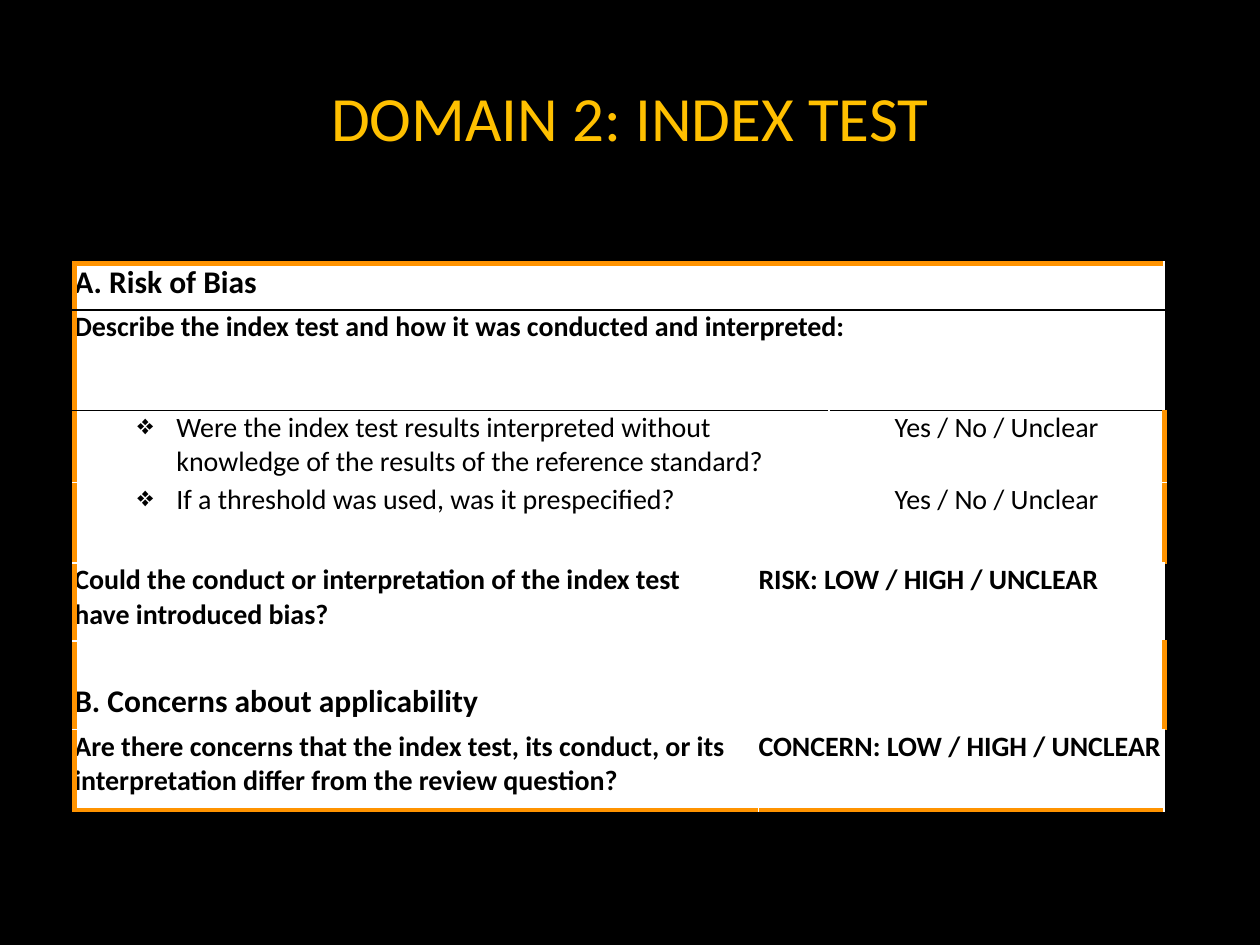
from lxml import etree
from pptx import Presentation
from pptx.dml.color import RGBColor
from pptx.enum.text import MSO_ANCHOR, PP_ALIGN
from pptx.oxml.ns import qn
from pptx.util import Inches, Pt

BLACK = RGBColor(0x00, 0x00, 0x00)
WHITE = RGBColor(0xFF, 0xFF, 0xFF)
GOLD = RGBColor(0xFF, 0xC0, 0x00)
ORANGE = RGBColor(0xFF, 0x93, 0x00)
CENTER, LEFT = PP_ALIGN.CENTER, PP_ALIGN.LEFT
MIDDLE, BOTTOM = MSO_ANCHOR.MIDDLE, MSO_ANCHOR.BOTTOM

COLS = [5.43, 0.56, 2.66]
ROWS = [0.37, 0.8, 0.57, 0.64, 0.62, 0.7, 0.64]
HEAD = {"size": Pt(18), "bold": True}
BOLD = {"size": Pt(16), "bold": True}
PLAIN = {"size": Pt(16), "bold": False}
ANSWER = "Yes / No / Unclear"

# row, first column, last column, lines, font, alignment, bulleted
CELLS = [
    (0, 0, 2, ["A. Risk of Bias"], HEAD, LEFT, False),
    (1, 0, 2, ["Describe the index test and how it was conducted and interpreted:"],
     BOLD, LEFT, False),
    (2, 0, 1, ["Were the index test results interpreted without knowledge of "
               "the results of the reference standard?"], PLAIN, LEFT, True),
    (2, 2, 2, [ANSWER], PLAIN, CENTER, False),
    (3, 0, 1, ["If a threshold was used, was it prespecified?"], PLAIN, LEFT, True),
    (3, 2, 2, [ANSWER], PLAIN, CENTER, False),
    (4, 0, 0, ["Could the conduct or interpretation of the index test",
               "have introduced bias?"], BOLD, LEFT, False),
    (4, 1, 2, ["RISK: LOW / HIGH / UNCLEAR"], BOLD, LEFT, False),
    (5, 0, 1, ["B. Concerns about applicability"], HEAD, LEFT, False),
    (6, 0, 0, ["Are there concerns that the index test, its conduct, or its",
               "interpretation differ from the review question?"], BOLD, LEFT, False),
    (6, 1, 2, ["CONCERN: LOW / HIGH / UNCLEAR"], BOLD, LEFT, False),
]


def assign(item, values):
    for name, value in values.items():
        setattr(item, name, value)


def write(frame, lines, font, align, color):
    for num, line in enumerate(lines):
        para = frame.add_paragraph() if num else frame.paragraphs[0]
        para.alignment = align
        run = para.add_run()
        run.text = line
        assign(run.font, {"name": "Calibri", **font})
        run.font.color.rgb = color


def add_bullet(para):
    props = para._p.get_or_add_pPr()
    props.set("marL", str(Inches(0.81)))
    props.set("indent", str(Inches(-0.31)))
    etree.SubElement(props, qn("a:buChar")).set("char", "❖")


def add_border(cell, side, color, width):
    line = etree.SubElement(cell._tc.get_or_add_tcPr(), qn("a:ln" + side))
    line.set("w", str(Pt(width)))
    fill = etree.SubElement(line, qn("a:solidFill"))
    etree.SubElement(fill, qn("a:srgbClr")).set("val", str(color))


def style_cell(cell, row, col):
    """Frame the table in orange and rule off its first two rows in black."""
    last = len(ROWS) - 1
    if col == 0:
        add_border(cell, "L", ORANGE, 3)
    if col == len(COLS) - 1:
        add_border(cell, "R", ORANGE, 3)
    if row == 0:
        add_border(cell, "T", ORANGE, 3)
    elif row <= 2:
        add_border(cell, "T", BLACK, 1)
    if row == last:
        add_border(cell, "B", ORANGE, 3)
    elif row <= 1:
        add_border(cell, "B", BLACK, 1)
    cell.fill.solid()
    cell.fill.fore_color.rgb = WHITE
    sides = ("left", "right", "top", "bottom")
    assign(cell, {"margin_" + side: 0 for side in sides})


def add_title(slide):
    box = slide.shapes.add_textbox(Inches(0.5), Inches(0.3), Inches(9), Inches(1.25))
    frame = box.text_frame
    assign(frame, {"word_wrap": True, "vertical_anchor": MIDDLE})
    write(frame, ["DOMAIN 2: INDEX TEST"], {"size": Pt(36)}, CENTER, GOLD)


def add_grid(slide):
    grid = slide.shapes.add_table(
        len(ROWS), len(COLS), Inches(0.59), Inches(2.09),
        Inches(sum(COLS)), Inches(sum(ROWS))).table
    assign(grid, {"first_row": False, "horz_banding": False})
    for col, width in zip(grid.columns, COLS):
        col.width = Inches(width)
    for num, height in enumerate(ROWS):
        grid.rows[num].height = Inches(height)
        for col in range(len(COLS)):
            style_cell(grid.cell(num, col), num, col)
    for row, first, last, lines, font, align, bullet in CELLS:
        cell = grid.cell(row, first)
        if last > first:
            cell.merge(grid.cell(row, last))
        write(cell.text_frame, lines, font, align, BLACK)
        para = cell.text_frame.paragraphs[0]
        if font is HEAD:
            para.space_before = Pt(6)
        if bullet:
            add_bullet(para)
    assign(grid.cell(5, 0), {"vertical_anchor": BOTTOM, "margin_bottom": Inches(0.07)})


def main():
    deck = Presentation()
    assign(deck, {"slide_width": Inches(10), "slide_height": Inches(7.5)})
    slide = deck.slides.add_slide(deck.slide_layouts[6])
    slide.background.fill.solid()
    slide.background.fill.fore_color.rgb = BLACK
    add_title(slide)
    add_grid(slide)
    deck.save("out.pptx")


if __name__ == "__main__":
    main()
